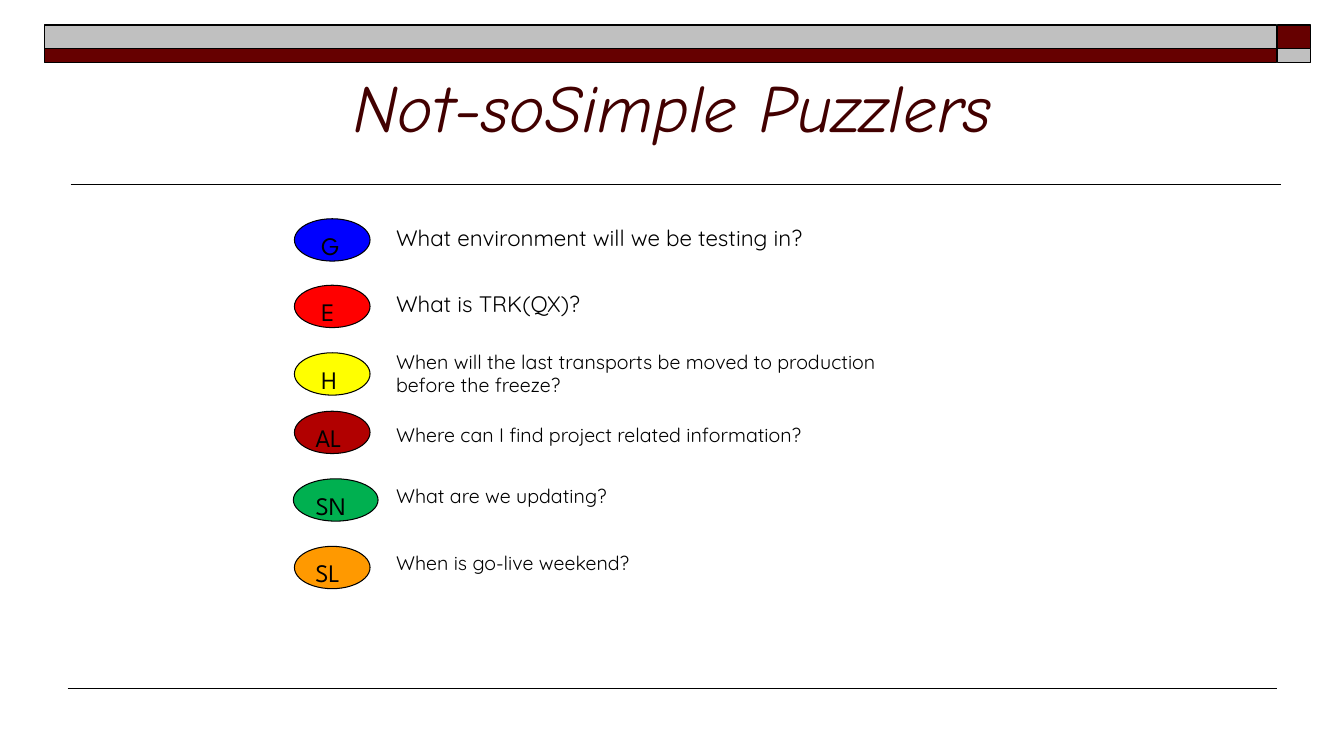
import pptx
import pptx.dml.color
import pptx.enum.shapes
import pptx.enum.text
import pptx.oxml
import pptx.util
from pptx.util import Inches

COLOURS = {
    "maroon": "660000", "silver": "C0C0C0", "black": "000000", "title": "420000",
    "blue": "0000FF", "red": "FF0000", "yellow": "FFFF00",
    "crimson": "B10000", "green": "00B050", "orange": "FF9900",
}
SHAPES = pptx.enum.shapes.MSO_SHAPE
ALIGN = pptx.enum.text.PP_ALIGN
ANCHOR = pptx.enum.text.MSO_ANCHOR

BANDS = [
    (12.67, 0.25, 0.33, 0.23, "maroon"),
    (0.44, 0.25, 12.22, 0.23, "silver"),
    (0.44, 0.48, 12.22, 0.14, "maroon"),
    (12.67, 0.48, 0.33, 0.14, "silver"),
]
QUESTIONS = [
    ("G", "blue", 2.17, 2.17, 16, "What environment will we be testing in?"),
    ("E", "red", 2.83, 2.83, 16, "What is TRK(QX)?"),
    ("H", "yellow", 3.5, 3.42, 14,
     "When will the last transports be moved to production before the freeze?"),
    ("AL", "crimson", 4.08, 4.15, 14, "Where can I find project related information?"),
    ("SN", "green", 4.75, 4.75, 14, "What are we updating?"),
    ("SL", "orange", 5.42, 5.42, 14, "When is go-live weekend?"),
]


def colour(name):
    """Return the named colour."""
    return pptx.dml.color.RGBColor.from_string(COLOURS[name])


def style_text(para, text, font, size, ink="black"):
    """Fill a paragraph with text in one font."""
    para.text = text
    para.font.name = font
    para.font.size = pptx.util.Pt(size)
    para.font.color.rgb = colour(ink)


def add_filled(page, kind, left, top, width, height, fill, weight):
    """Add a filled shape with a black outline."""
    shape = page.shapes.add_shape(
        kind, Inches(left), Inches(top), Inches(width), Inches(height))
    shape.shadow.inherit = False
    shape.fill.solid()
    shape.fill.fore_color.rgb = colour(fill)
    shape.line.color.rgb = colour("black")
    shape.line.width = pptx.util.Pt(weight)
    return shape


def add_rule(page, left, right, top, weight):
    """Add a horizontal black line."""
    rule = page.shapes.add_connector(
        pptx.enum.shapes.MSO_CONNECTOR.STRAIGHT,
        Inches(left), Inches(top), Inches(right), Inches(top))
    rule.line.color.rgb = colour("black")
    rule.line.width = pptx.util.Pt(weight)
    properties = rule._element.spPr
    properties.append(pptx.oxml.parse_xml(
        '<a:effectLst xmlns:a="http://schemas.openxmlformats.org/drawingml/2006/main"/>'))


def add_title(page, text):
    """Place and format the slide title."""
    title = page.shapes.title
    title.left, title.top = Inches(2.17), Inches(0.25)
    title.width, title.height = Inches(9), Inches(1.25)
    title.text_frame.vertical_anchor = ANCHOR.BOTTOM
    para = title.text_frame.paragraphs[0]
    style_text(para, text, "Comic Neue", 48, "title")
    para.font.italic = True
    para.alignment = ALIGN.CENTER


def add_badge(page, letters, fill, top):
    """Add an oval that carries a category code."""
    left, width = (2.91, 0.84) if letters == "SN" else (2.92, 0.75)
    badge = add_filled(page, SHAPES.OVAL, left, top, width, 0.42, fill, 0.75)
    badge.text_frame.vertical_anchor = ANCHOR.TOP
    para = badge.text_frame.paragraphs[0]
    style_text(para, letters, "League Spartan", 18)
    para.alignment = ALIGN.LEFT
    if len(letters) == 1:
        para._p.get_or_add_pPr().set("marL", str(Inches(0.06)))


def add_question(page, text, top, size):
    """Add a question beside its badge."""
    box = page.shapes.add_textbox(
        Inches(3.83), Inches(top), Inches(5.17), Inches(0.37))
    box.text_frame.word_wrap = True
    box.text_frame.auto_size = pptx.enum.text.MSO_AUTO_SIZE.SHAPE_TO_FIT_TEXT
    style_text(box.text_frame.paragraphs[0], text, "Quicksand", size)


def main():
    """Build and save the slide."""
    deck = pptx.Presentation()
    deck.slide_width, deck.slide_height = Inches(13.33), Inches(7.5)
    page = deck.slides.add_slide(deck.slide_layouts[5])
    add_rule(page, 0.7, 12.71, 1.83, 1)
    for left, top, width, height, fill in BANDS:
        add_filled(page, SHAPES.RECTANGLE, left, top, width, height, fill, 1)
    add_rule(page, 0.67, 12.67, 6.83, 0.75)
    add_title(page, "Not-soSimple Puzzlers")
    for letters, fill, badge_top, text_top, size, text in QUESTIONS:
        add_badge(page, letters, fill, badge_top)
        add_question(page, text, text_top, size)
    deck.save("out.pptx")


if __name__ == "__main__":
    main()
